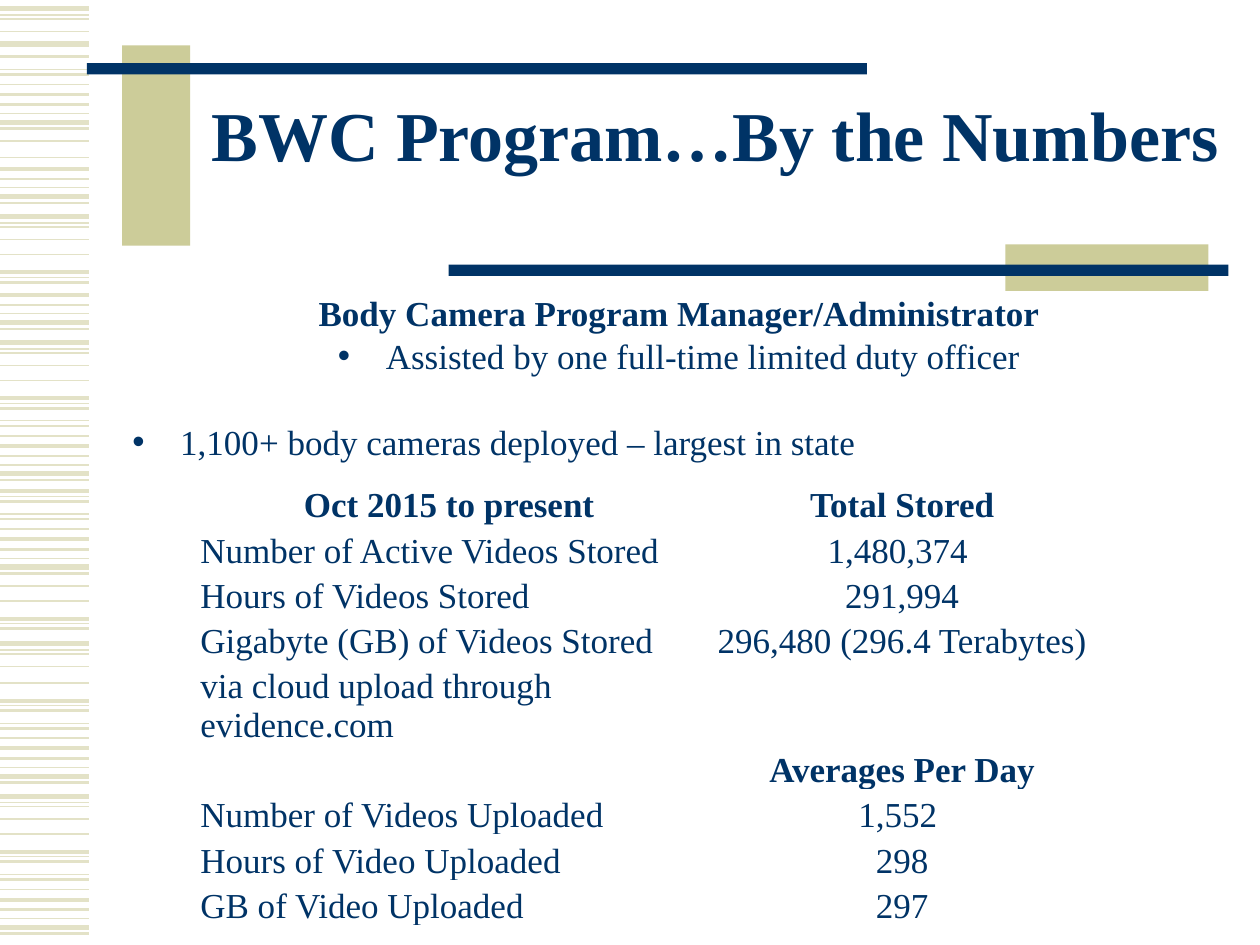
import lxml.etree
import pptx
import pptx.dml.color
import pptx.enum.shapes
import pptx.enum.text
import pptx.oxml.ns
import pptx.util

Inches = pptx.util.Inches
Pt = pptx.util.Pt
ALIGN = pptx.enum.text.PP_ALIGN
ANCHOR = pptx.enum.text.MSO_ANCHOR
NAVY = pptx.dml.color.RGBColor(0x00, 0x33, 0x66)
KHAKI = pptx.dml.color.RGBColor(0xCC, 0xCC, 0x99)
PALE_KHAKI = pptx.dml.color.RGBColor(0xE3, 0xE2, 0xC7)

OPENING = [(0, 3), (0.05, 0.75), (0.08, 1), (0.18, 1)]
MIDDLE = [(0, 2.25), (0.04, 0.75), (0.08, 1.5)]
CLOSING = [(0, 2.25), (0.08, 1.5), (0.15, 0.75), (0.22, 3), (0.27, 1.5)]
LEAD_IN = [(0, 0.75), (0.04, 1.5), (0.12, 1)]
STRIPE_GROUPS = [
    (OPENING, [0.07, 1.72, 2.72, 5.11, 6.32]),
    (MIDDLE, [2.16, 3.16, 3.9, 4.91, 5.56, 6.76]),
    (LEAD_IN, [0.55, 3.34, 4.08, 5.74, 6.94]),
    (CLOSING, [0.75, 1.34, 2.34, 3.54, 4.28, 5.94, 7.14]),
    ([(0, 1)], [1.12, 1.25, 2.02, 3.02, 4.65, 4.77, 5.42, 6.62]),
    ([(0, 3), (0.1, 1.5)], [0.35]),
]

ACCENTS = [
    ((0.97, 0.36, 0.54, 1.59), KHAKI),
    ((0.69, 0.5, 6.19, 0.09), NAVY),
    ((7.98, 1.94, 1.61, 0.37), KHAKI),
    ((3.56, 2.1, 6.19, 0.09), NAVY),
]

STAFFING = [
    ("Body Camera Program Manager/Administrator", True, False, ALIGN.CENTER, 0),
    ("Assisted by one full-time limited duty officer", False, True, ALIGN.CENTER, 1),
    ("1,100+ body cameras deployed – largest in state", False, True, ALIGN.LEFT, 25),
]

COLUMN_WIDTHS = [3.97, 3.22]
VIDEO_TOTALS = [
    ("Oct 2015 to present", "Total Stored"),
    ("Number of Active Videos Stored", "1,480,374 "),
    ("Hours of Videos Stored", "291,994"),
    ("Gigabyte (GB) of Videos Stored", "296,480 (296.4 Terabytes)"),
    ("via cloud upload through evidence.com", ""),
    ("", "Averages Per Day"),
    ("Number of Videos Uploaded", "1,552 "),
    ("Hours of Video Uploaded", "298"),
    ("GB of Video Uploaded", "297"),
]
HEADINGS = {"Oct 2015 to present", "Total Stored", "Averages Per Day"}
TALL_ROW = 4


def apply_format(target, values):
    for name, value in values.items():
        setattr(target, name, value)


def format_font(font, size, bold):
    apply_format(font, {"name": "Times New Roman", "size": Pt(size), "bold": bold})
    font.color.rgb = NAVY


def move(part, box):
    names = ("left", "top", "width", "height")
    apply_format(part, dict(zip(names, map(Inches, box))))


def add_stripes(slide, box):
    left, top, width, _ = box
    for pattern, starts in STRIPE_GROUPS:
        for start in starts:
            for offset, weight in pattern:
                y = Inches(top + start + offset)
                stripe = slide.shapes.add_connector(
                    pptx.enum.shapes.MSO_CONNECTOR.STRAIGHT,
                    Inches(left), y, Inches(left + width), y)
                stripe.line.color.rgb = PALE_KHAKI
                stripe.line.width = Pt(weight)
                lxml.etree.SubElement(
                    stripe._element.spPr, pptx.oxml.ns.qn("a:effectLst"))


def add_accents(slide):
    for box, color in ACCENTS:
        bar = slide.shapes.add_shape(
            pptx.enum.shapes.MSO_SHAPE.RECTANGLE, *map(Inches, box))
        bar.shadow.inherit = False
        bar.fill.solid()
        bar.fill.fore_color.rgb = color
        bar.line.fill.background()


def fill_title(slide, box):
    title = slide.shapes.title
    move(title, box)
    apply_format(title.text_frame, {
        "text": "BWC Program…By the Numbers",
        "word_wrap": True,
        "auto_size": pptx.enum.text.MSO_AUTO_SIZE.NONE,
        "vertical_anchor": ANCHOR.TOP,
        "margin_top": 0,
    })
    heading = title.text_frame.paragraphs[0]
    apply_format(heading, {"alignment": ALIGN.CENTER, "line_spacing": 0.85})
    format_font(heading.runs[0].font, 40, True)


def set_bullet(paragraph, bulleted):
    properties = paragraph._p.get_or_add_pPr()
    indent = Inches(0.38) if bulleted else 0
    properties.set("marL", str(indent))
    properties.set("indent", str(-indent))
    tag = "a:buChar" if bulleted else "a:buNone"
    bullet = lxml.etree.SubElement(properties, pptx.oxml.ns.qn(tag))
    if bulleted:
        bullet.set("char", "•")


def fill_staffing(slide, box):
    staffing = slide.placeholders[1]
    move(staffing, box)
    frame = staffing.text_frame
    apply_format(frame, {
        "text": "\n".join(line[0] for line in STAFFING),
        "word_wrap": True,
        "auto_size": pptx.enum.text.MSO_AUTO_SIZE.NONE,
        "vertical_anchor": ANCHOR.TOP,
        "margin_top": Inches(0.08),
    })
    for paragraph, (_, bold, bulleted, alignment, gap) in zip(frame.paragraphs, STAFFING):
        set_bullet(paragraph, bulleted)
        apply_format(paragraph, {"alignment": alignment, "space_before": Pt(gap)})
        format_font(paragraph.runs[0].font, 20, bold)


def add_video_totals(slide, box):
    table = slide.shapes.add_table(
        len(VIDEO_TOTALS), len(COLUMN_WIDTHS), *map(Inches, box)).table
    apply_format(table, {"first_row": False, "horz_banding": False})
    for column, width in zip(table.columns, COLUMN_WIDTHS):
        column.width = Inches(width)
    for row_index, entries in enumerate(VIDEO_TOTALS):
        row = table.rows[row_index]
        row.height = Inches(0.66 if row_index == TALL_ROW else 0.36)
        for column_index, entry in enumerate(entries):
            cell = row.cells[column_index]
            cell.fill.background()
            apply_format(cell, {
                "text": entry,
                "vertical_anchor": ANCHOR.BOTTOM,
                "margin_left": Inches(0.01),
                "margin_right": Inches(0.01),
                "margin_top": Inches(0.01),
                "margin_bottom": 0,
            })
            paragraph = cell.text_frame.paragraphs[0]
            centered = column_index == 1 or entry in HEADINGS
            paragraph.alignment = ALIGN.CENTER if centered else ALIGN.LEFT
            for run in paragraph.runs:
                format_font(run.font, 20, entry in HEADINGS)


def main():
    deck = pptx.Presentation()
    apply_format(deck, {"slide_width": Inches(10), "slide_height": Inches(7.5)})
    slide = deck.slides.add_slide(deck.slide_layouts[1])
    add_stripes(slide, (0, 0, 0.71, 7.5))
    add_accents(slide)
    fill_title(slide, (1.55, 0.83, 8.25, 1.08))
    add_video_totals(slide, (1.58, 3.81, 7.19, 3.54))
    fill_staffing(slide, (0.95, 2.23, 8.88, 1.45))
    deck.save("out.pptx")


if __name__ == "__main__":
    main()
